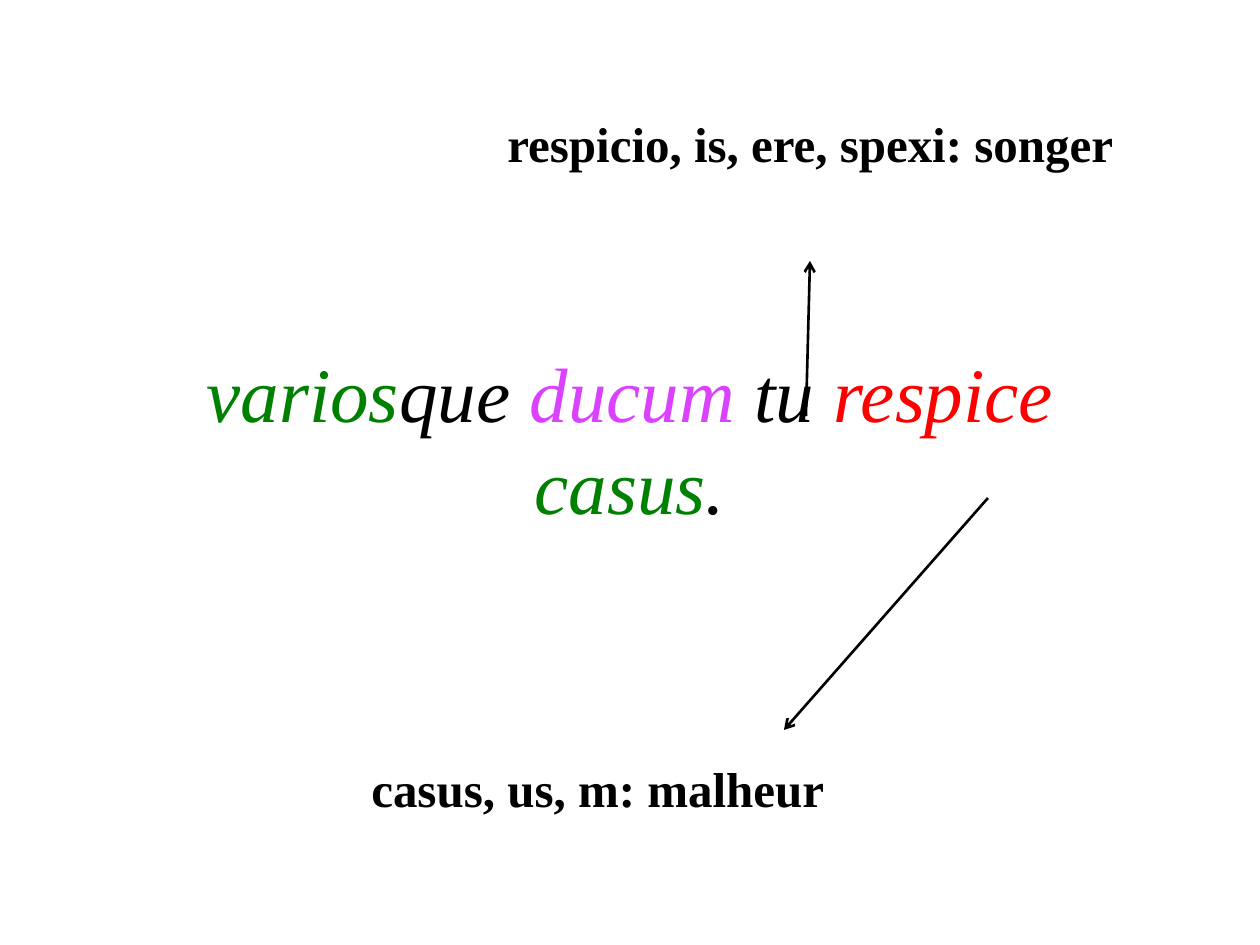
from lxml.etree import SubElement
from pptx import Presentation
from pptx.dml.color import RGBColor
from pptx.enum.shapes import MSO_CONNECTOR as CONNECTOR
from pptx.enum.text import MSO_ANCHOR as ANCHOR, MSO_AUTO_SIZE as AUTOSIZE, PP_ALIGN as ALIGN
from pptx.oxml.ns import qn
from pptx.util import Pt

SCALE = 914400 / 126
FONT = "Times New Roman"
COLORS = {
    "black": "000000",
    "white": "FFFFFF",
    "accusative": "008000",
    "genitive": "DA42FF",
    "verb": "FF0000",
}


def px(*lengths):
    return [round(length * SCALE) for length in lengths]


def color(name):
    return RGBColor.from_string(COLORS[name])


prs = Presentation()
prs.slide_width, prs.slide_height = px(1260, 945)
slide = prs.slides.add_slide(prs.slide_layouts[5])

verse = slide.shapes.title
verse.left, verse.top, verse.width, verse.height = px(126, 378, 1008, 120)
verse_frame = verse.text_frame
verse_frame.word_wrap = True
verse_frame.auto_size = AUTOSIZE.NONE
verse_frame.vertical_anchor = ANCHOR.MIDDLE
verse_line = verse_frame.paragraphs[0]
verse_line.alignment = ALIGN.CENTER
verse_line.font.name = FONT
verse_line.font.size = Pt(44)
verse_line.font.italic = True
for words, role in [
    ("varios", "accusative"),
    ("que ", "black"),
    ("ducum", "genitive"),
    (" tu ", "black"),
    ("respice ", "verb"),
    ("casus", "accusative"),
    (".", "black"),
]:
    word = verse_line.add_run()
    word.text = words
    word.font.color.rgb = color(role)

for entry, box in [
    ("respicio, is, ere, spexi: songer", (495, 107, 639, 72)),
    ("casus, us, m: malheur", (359, 752, 502, 72)),
]:
    gloss = slide.shapes.add_textbox(*px(*box))
    gloss.fill.solid()
    gloss.fill.fore_color.rgb = color("white")
    gloss.text_frame.word_wrap = True
    gloss.text_frame.auto_size = AUTOSIZE.SHAPE_TO_FIT_TEXT
    gloss_line = gloss.text_frame.paragraphs[0]
    gloss_line.text = entry
    gloss_line.font.name = FONT
    gloss_line.font.size = Pt(28)
    gloss_line.font.bold = True
    gloss_line.font.color.rgb = color("black")

for ends in [(806, 416, 810, 261), (988, 498, 784, 730)]:
    arrow = slide.shapes.add_connector(CONNECTOR.STRAIGHT, *px(*ends))
    arrow.line.color.rgb = color("black")
    arrow.line.width = Pt(1.5)
    SubElement(arrow.line._get_or_add_ln(), qn("a:tailEnd"), type="arrow")
    SubElement(arrow._element.spPr, qn("a:effectLst"))

prs.save("out.pptx")
